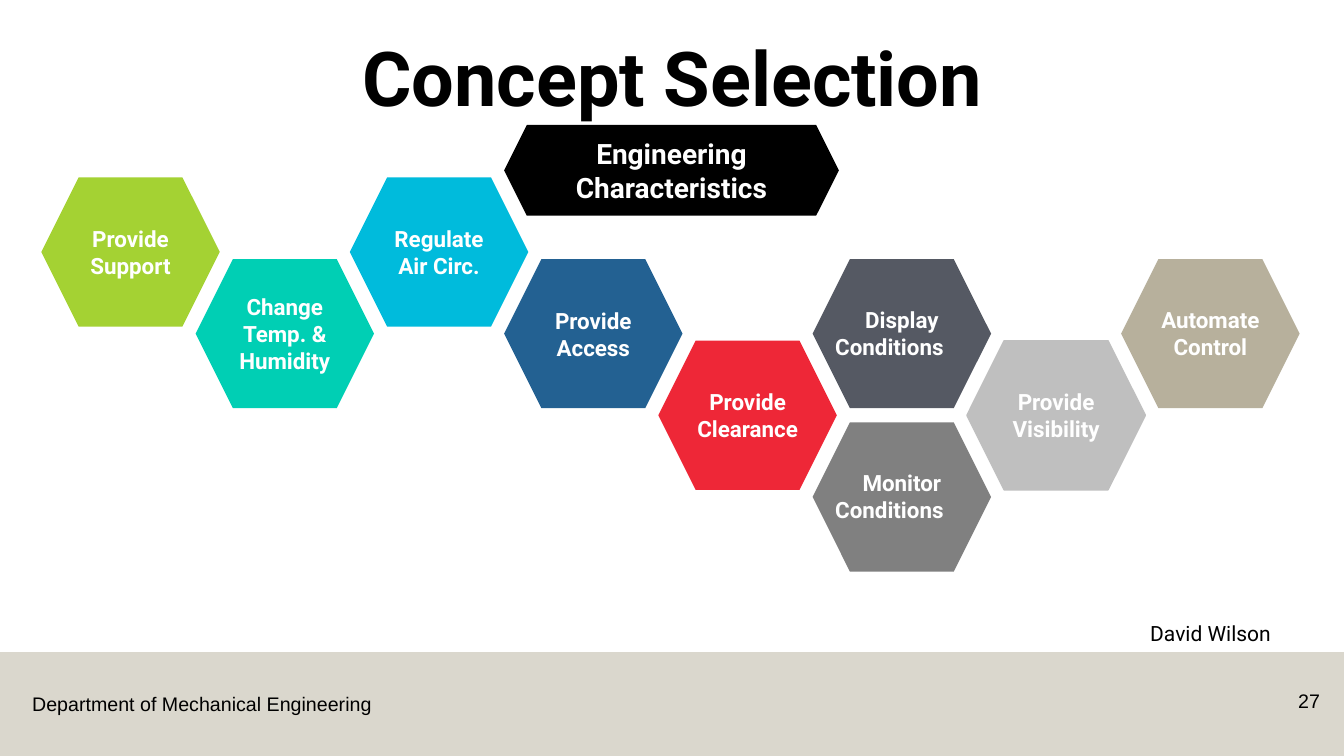
from lxml import etree
from pptx import Presentation
from pptx.dml.color import RGBColor
from pptx.enum.shapes import MSO_SHAPE
from pptx.enum.text import MSO_ANCHOR, PP_ALIGN
from pptx.oxml.ns import qn
from pptx.util import Inches, Pt

BLACK = RGBColor(0x00, 0x00, 0x00)
WHITE = RGBColor(0xFF, 0xFF, 0xFF)
LIME = RGBColor(0xA4, 0xD2, 0x33)
TEAL = RGBColor(0x00, 0xCF, 0xB4)
CYAN = RGBColor(0x00, 0xBB, 0xDC)
BLUE = RGBColor(0x23, 0x61, 0x92)
RED = RGBColor(0xEE, 0x27, 0x37)
SLATE = RGBColor(0x55, 0x59, 0x63)
GRAY = RGBColor(0x80, 0x80, 0x80)
SILVER = RGBColor(0xBF, 0xBF, 0xBF)
SAND = RGBColor(0xB7, 0xB0, 0x9C)

# Honeycomb grid
HEX_WIDTH, HEX_HEIGHT = 1.77, 1.48
GRID_LEFT, GRID_TOP = 0.41, 1.76
COLUMN_STEP, ROW_STEP = 1.53, 0.81
LABEL_WIDTH, LABEL_HEIGHT, LABEL_DROP = 1.52, 0.64, 0.42

# Column, row, colour, text set inside the hexagon
CHARACTERISTICS = [
    (0, 0, LIME, "Provide Support"),
    (1, 1, TEAL, "Change Temp. & Humidity"),
    (2, 0, CYAN, "Regulate Air Circ."),
    (3, 1, BLUE, "Provide Access"),
    (6, 2, SILVER, "Provide Visibility"),
]
# Column, row, colour, text set in a box over the hexagon, alignments
LABELLED_CHARACTERISTICS = [
    (4, 2, RED, "Provide Clearance", [PP_ALIGN.CENTER]),
    (5, 3, GRAY, "Monitor\nConditions", [PP_ALIGN.CENTER, PP_ALIGN.LEFT]),
    (5, 1, SLATE, "Display\nConditions", [PP_ALIGN.CENTER, PP_ALIGN.LEFT]),
    (7, 1, SAND, "Automate Control", [PP_ALIGN.CENTER]),
]


def write(frame, text, size, color, aligns, font="Roboto", bold=False):
    frame.text = text
    for paragraph, align in zip(frame.paragraphs, aligns):
        paragraph.alignment = align
        for run in paragraph.runs:
            run.font.size = Pt(size)
            run.font.name = font
            run.font.bold = bold
            run.font.color.rgb = color


def add_text(slide, box, text, size, color, aligns, font="Roboto",
             bold=False, wrap=True):
    frame = slide.shapes.add_textbox(*map(Inches, box)).text_frame
    frame.word_wrap = wrap
    write(frame, text, size, color, aligns, font, bold)
    return frame


def add_block(slide, kind, box, color):
    block = slide.shapes.add_shape(kind, *map(Inches, box))
    block.shadow.inherit = False
    block.fill.solid()
    block.fill.fore_color.rgb = color
    block.line.fill.background()
    return block


def add_hexagon(slide, box, color, text="", size=16):
    hexagon = add_block(slide, MSO_SHAPE.HEXAGON, box, color)
    if text:
        frame = hexagon.text_frame
        frame.word_wrap = True
        frame.vertical_anchor = MSO_ANCHOR.MIDDLE
        write(frame, text, size, WHITE, [PP_ALIGN.CENTER], bold=True)
    return hexagon


def cell_box(column, row):
    return (GRID_LEFT + column * COLUMN_STEP, GRID_TOP + row * ROW_STEP,
            HEX_WIDTH, HEX_HEIGHT)


def add_labelled_hexagon(slide, box, color, text, aligns):
    add_hexagon(slide, box, color)
    left, top = box[:2]
    label_box = (left + (HEX_WIDTH - LABEL_WIDTH) / 2, top + LABEL_DROP,
                 LABEL_WIDTH, LABEL_HEIGHT)
    add_text(slide, label_box, text, 16, WHITE, aligns, bold=True)


def add_footer(slide):
    band = add_block(slide, MSO_SHAPE.RECTANGLE, (0, 6.47, 13.33, 1.03), SAND)
    band_color = next(band.fill._xPr.iter(qn("a:srgbClr")))
    etree.SubElement(band_color, qn("a:alpha")).set("val", "50000")
    add_text(slide, (0.22, 6.82, 3.59, 0.34), "Department of Mechanical Engineering",
             14, BLACK, [PP_ALIGN.LEFT], font="Arial", wrap=False)
    add_text(slide, (12.42, 6.79, 0.77, 0.4), "27",
             14, BLACK, [PP_ALIGN.RIGHT], font="Arial")


def main():
    deck = Presentation()
    deck.slide_width, deck.slide_height = Inches(13.33), Inches(7.5)
    slide = deck.slides.add_slide(deck.slide_layouts[6])

    # Footer and title
    add_footer(slide)
    title = add_text(slide, (0.92, 0.44, 11.5, 0.74), "Concept Selection",
                     54, BLACK, [PP_ALIGN.CENTER], bold=True)
    title.vertical_anchor = MSO_ANCHOR.MIDDLE
    title.paragraphs[0].line_spacing = 0.9

    # Honeycomb of characteristics
    for column, row, color, text in CHARACTERISTICS:
        hexagon = add_hexagon(slide, cell_box(column, row), color, text)
        if color == SILVER:
            hexagon.line.color.rgb = SILVER
            hexagon.line.width = Pt(1)
    for column, row, color, text, aligns in LABELLED_CHARACTERISTICS:
        add_labelled_hexagon(slide, cell_box(column, row), color, text, aligns)

    # Heading of the honeycomb and presenter
    add_hexagon(slide, (5, 1.24, 3.32, 0.9), BLACK,
                "Engineering Characteristics", size=20)
    add_text(slide, (11.31, 6.11, 2, 0.35), "David Wilson",
             15, BLACK, [PP_ALIGN.LEFT])

    deck.save("out.pptx")


if __name__ == "__main__":
    main()
